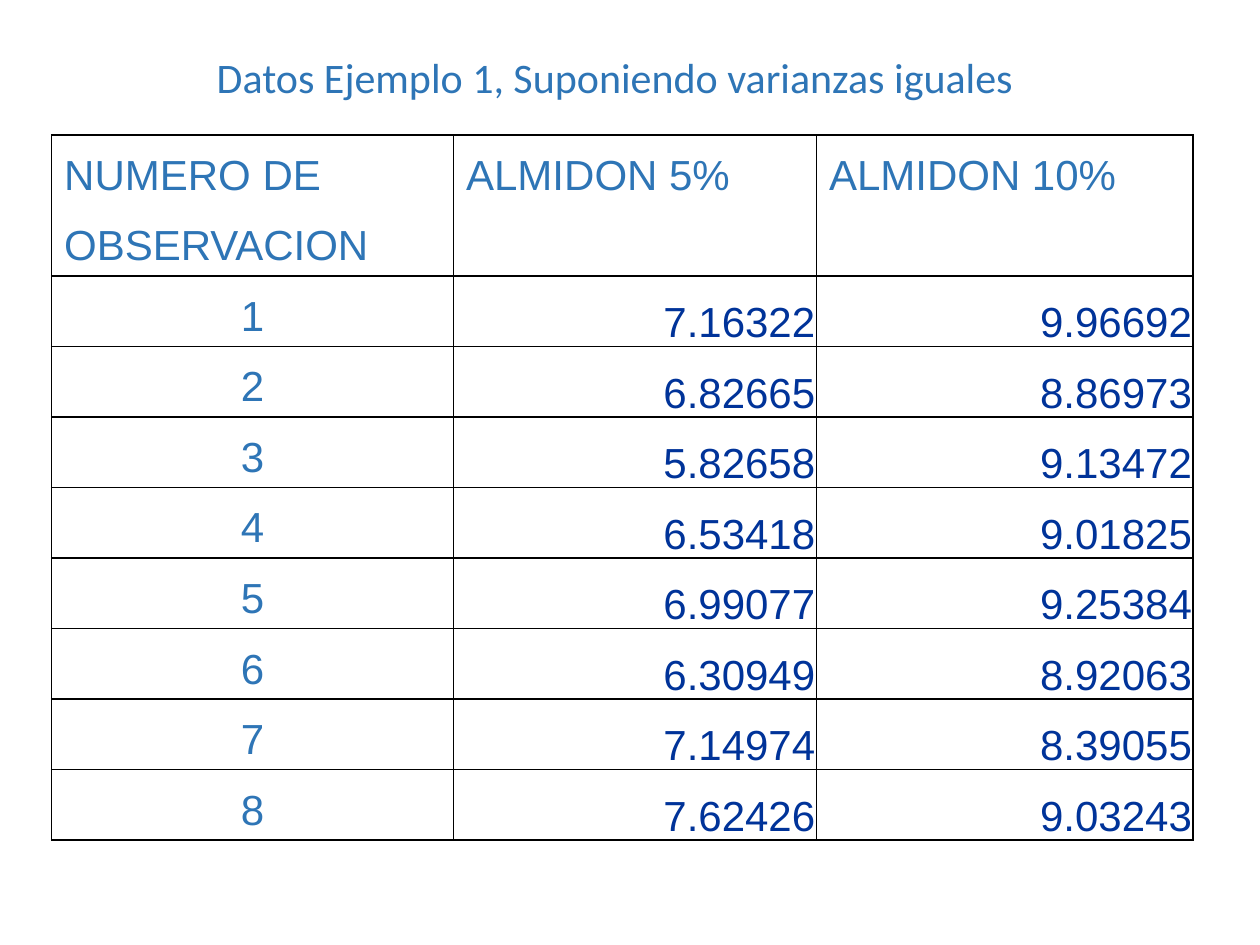
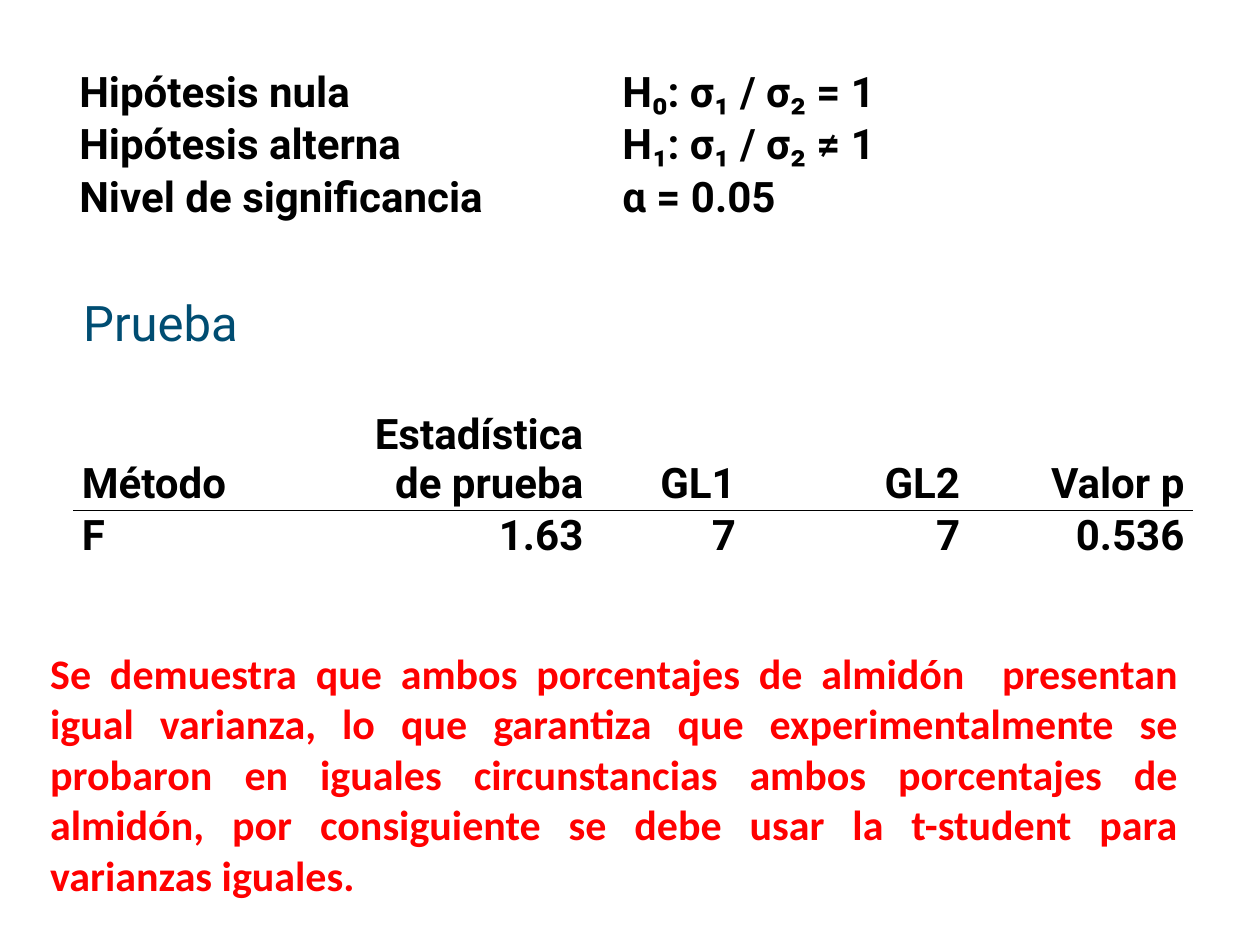
from dataclasses import dataclass

from lxml import etree
from pptx import Presentation, util as u
from pptx.dml.color import RGBColor
from pptx.enum import text as t
from pptx.oxml import ns

Inches, Pt = u.Inches, u.Pt
LEFT, CENTER, RIGHT, JUSTIFY = (
    t.PP_ALIGN.LEFT, t.PP_ALIGN.CENTER, t.PP_ALIGN.RIGHT, t.PP_ALIGN.JUSTIFY)
TOP, MIDDLE, BOTTOM = t.MSO_ANCHOR.TOP, t.MSO_ANCHOR.MIDDLE, t.MSO_ANCHOR.BOTTOM


@dataclass(frozen=True)
class Theme:
    white: str = "FFFFFF"
    black: str = "000000"
    blue: str = "2E75B6"
    navy: str = "003399"
    teal: str = "004D72"
    red: str = "FF0000"
    body_size: int = 24
    heading_size: int = 28
    grid_line: float = 1
    rule_line: float = 0.75


THEME = Theme()
TITLE = dict(name="Calibri", color=THEME.blue)
HEADING = dict(name="Roboto", color=THEME.teal, size=THEME.heading_size)
CONCLUSION = dict(name="Calibri", color=THEME.red, bold=True)
DATA_LABEL = dict(name="Arial", color=THEME.blue)
DATA_VALUE = dict(name="Arial", color=THEME.navy)
RESULT = dict(name="Roboto", color=THEME.black, bold=True)

# Cell insets in inches: left, top, right, bottom
LABEL_INSETS = (0.1, 0.05, 0.1, 0.05)
VALUE_INSETS = (0.01, 0.01, 0.01, 0)
RESULT_INSETS = (0.07, 0.01, 0.07, 0.01)


class Deck:
    def __init__(self, theme):
        self.theme = theme
        self.presentation = Presentation()
        self.presentation.slide_width = Inches(10)
        self.presentation.slide_height = Inches(7.5)
        self.slide = None

    def add_slide(self):
        title_only = self.presentation.slide_layouts[5]
        self.slide = self.presentation.slides.add_slide(title_only)

    def set_text(self, frame, content, style, align=LEFT):
        frame.text = content
        for paragraph in frame.paragraphs:
            paragraph.alignment = align
            for run in paragraph.runs:
                values = {"size": self.theme.body_size, "bold": False, **style}
                run.font.color.rgb = RGBColor.from_string(values.pop("color"))
                values["size"] = Pt(values["size"])
                for name, value in values.items():
                    setattr(run.font, name, value)

    def title(self, content, box, style, align=LEFT, anchor=TOP, wrap=True):
        shape = self.slide.shapes.title
        for name, value in zip(("left", "top", "width", "height"), box):
            setattr(shape, name, Inches(value))
        frame = shape.text_frame
        frame.auto_size = t.MSO_AUTO_SIZE.SHAPE_TO_FIT_TEXT
        frame.vertical_anchor = anchor
        frame.word_wrap = wrap
        self.set_text(frame, content, style, align)

    def text(self, content, box, style, align=LEFT):
        shape = self.slide.shapes.add_textbox(*map(Inches, box))
        shape.text_frame.word_wrap = True
        self.set_text(shape.text_frame, content, style, align)

    def table(self, left, top, widths, heights):
        frame = self.slide.shapes.add_table(
            len(heights), len(widths), Inches(left), Inches(top),
            Inches(sum(widths)), Inches(sum(heights)))
        table = frame.table
        table.first_row = table.horz_banding = False
        for column, width in zip(table.columns, widths):
            column.width = Inches(width)
        for row, height in zip(table.rows, heights):
            row.height = Inches(height)
        return table

    def cell(self, cell, content, style, insets, align=LEFT, anchor=TOP,
             lines="", line_width=THEME.grid_line):
        """Fill one cell; lines names the ruled sides, such as "LRTB"."""
        for side, inset in zip(("left", "top", "right", "bottom"), insets):
            setattr(cell, f"margin_{side}", Inches(inset))
        cell.vertical_anchor = anchor
        self.set_text(cell.text_frame, content, style, align)
        self.borders(cell, lines, line_width)
        cell.fill.solid()
        cell.fill.fore_color.rgb = RGBColor.from_string(self.theme.white)

    def borders(self, cell, lines, line_width):
        properties = cell._tc.get_or_add_tcPr()
        for side in "LRTB":
            line = etree.SubElement(properties, ns.qn(f"a:ln{side}"),
                                    w=str(Pt(line_width)))
            if side in lines:
                fill = etree.SubElement(line, ns.qn("a:solidFill"))
                etree.SubElement(fill, ns.qn("a:srgbClr"), val=self.theme.black)
            else:
                etree.SubElement(line, ns.qn("a:noFill"))


def build_data_slide(deck):
    headers = [("NUMERO DE", "ALMIDON 5%", "ALMIDON 10%"),
               ("OBSERVACION", "", "")]
    starch_5 = ["7.16322", "6.82665", "5.82658", "6.53418",
                "6.99077", "6.30949", "7.14974", "7.62426"]
    starch_10 = ["9.96692", "8.86973", "9.13472", "9.01825",
                 "9.25384", "8.92063", "8.39055", "9.03243"]

    deck.add_slide()
    deck.title("Datos Ejemplo 1, Suponiendo varianzas iguales",
               (0.43, 0.36, 8.9, 0.5), TITLE, CENTER)
    row_count = len(headers) + len(starch_5)
    table = deck.table(0.41, 1.07, (3.19, 2.88, 2.99), [0.56] * row_count)
    for row, (labels, lines) in enumerate(zip(headers, ("LRT", "LRB"))):
        for column, label in enumerate(labels):
            deck.cell(table.cell(row, column), label, DATA_LABEL, LABEL_INSETS,
                      anchor=BOTTOM, lines=lines)
    for number, values in enumerate(zip(starch_5, starch_10), start=1):
        row = number + len(headers) - 1
        deck.cell(table.cell(row, 0), str(number), DATA_LABEL, LABEL_INSETS,
                  CENTER, BOTTOM, "LRTB")
        for column, value in enumerate(values, start=1):
            deck.cell(table.cell(row, column), value, DATA_VALUE, VALUE_INSETS,
                      RIGHT, BOTTOM, "LRTB")


def build_test_slide(deck):
    hypotheses = [("Hipótesis nula", "H₀: σ₁ / σ₂ = 1"),
                  ("Hipótesis alterna", "H₁: σ₁ / σ₂ ≠ 1"),
                  ("Nivel de significancia", "α = 0.05")]
    f_test = [("Método", "Estadística\vde prueba", "GL1", "GL2", "Valor p"),
              ("F", "1.63", "7", "7", "0.536")]

    deck.add_slide()
    deck.title("Prueba", (0.56, 2.27, 1.45, 0.57), HEADING,
               anchor=MIDDLE, wrap=False)
    table = deck.table(0.56, 0.53, [4.31] * 2, [0.42] * len(hypotheses))
    for row, texts in enumerate(hypotheses):
        for column, content in enumerate(texts):
            deck.cell(table.cell(row, column), content, RESULT, RESULT_INSETS)

    table = deck.table(0.58, 2.83, (1.78, 2.34, 1.21, 1.78, 1.78), (1.22, 0.42))
    for row, (texts, anchor, line) in enumerate(
            zip(f_test, (BOTTOM, TOP), "BT")):
        for column, content in enumerate(texts):
            deck.cell(table.cell(row, column), content, RESULT, RESULT_INSETS,
                      RIGHT if column else LEFT, anchor, line,
                      deck.theme.rule_line)

    deck.text(
        "Se demuestra que ambos porcentajes de almidón  presentan igual "
        "varianza, lo que garantiza que experimentalmente se probaron en "
        "iguales circunstancias ambos porcentajes de almidón, por consiguiente "
        "se debe usar la t-student para varianzas iguales.",
        (0.3, 5.09, 9.15, 2.12), CONCLUSION, JUSTIFY)


def main():
    deck = Deck(THEME)
    build_data_slide(deck)
    build_test_slide(deck)
    deck.presentation.save("out.pptx")


if __name__ == "__main__":
    main()
